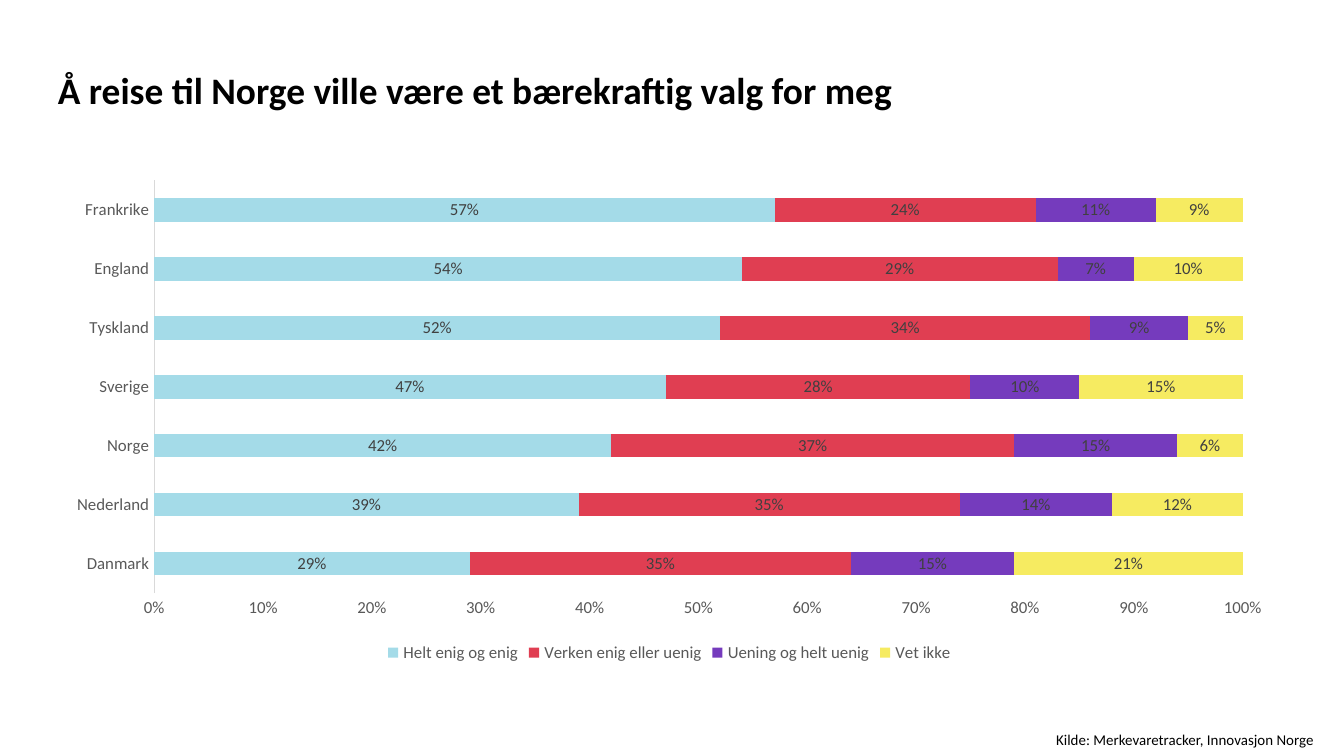
from dataclasses import dataclass

from pptx import Presentation
from pptx.chart.data import CategoryChartData
from pptx.dml.color import RGBColor
from pptx.enum.chart import XL_CHART_TYPE, XL_LEGEND_POSITION, XL_TICK_MARK
from pptx.enum.text import MSO_ANCHOR, MSO_AUTO_SIZE, PP_ALIGN
from pptx.util import Inches, Pt


@dataclass(frozen=True)
class Theme:
    font: str = "Calibri"
    text: str = "000000"
    axis_text: str = "595959"
    label_text: str = "404040"
    axis_line: str = "D9D9D9"
    background: str = "FFFFFF"
    title_size: int = 20
    chart_size: int = 10
    label_size: int = 9
    source_size: int = 8


@dataclass(frozen=True)
class Answer:
    name: str
    color: str
    percents: tuple[int, ...]


THEME = Theme()
COUNTRIES = ("Danmark", "Nederland", "Norge", "Sverige", "Tyskland", "England", "Frankrike")
ANSWERS = (
    Answer("Helt enig og enig", "A4DBE8", (29, 39, 42, 47, 52, 54, 57)),
    Answer("Verken enig eller uenig", "E03E52", (35, 35, 37, 28, 34, 29, 24)),
    Answer("Uening og helt uenig", "753BBD", (15, 14, 15, 10, 9, 7, 11)),
    Answer("Vet ikke", "F6EB61", (21, 12, 6, 15, 5, 10, 9)),
)


def set_font(font, size: int, color: str, bold: bool = False) -> None:
    font.name = THEME.font
    font.size = Pt(size)
    font.bold = bold
    font.color.rgb = RGBColor.from_string(color)


def set_fill(fill, color: str) -> None:
    fill.solid()
    fill.fore_color.rgb = RGBColor.from_string(color)


def add_title(slide, text: str) -> None:
    sp = slide.shapes.title
    sp.left, sp.top, sp.width, sp.height = map(Inches, (0.43, 0.5, 9.14, 0.34))
    set_fill(sp.fill, THEME.background)
    tf = sp.text_frame
    tf.margin_left = tf.margin_right = tf.margin_top = tf.margin_bottom = 0
    tf.vertical_anchor = MSO_ANCHOR.MIDDLE
    tf.word_wrap = True
    tf.auto_size = MSO_AUTO_SIZE.SHAPE_TO_FIT_TEXT
    tf.text = text
    p = tf.paragraphs[0]
    p.alignment = PP_ALIGN.LEFT
    set_font(p.font, THEME.title_size, THEME.text, bold=True)


def add_source(slide, text: str) -> None:
    sp = slide.shapes.add_textbox(*map(Inches, (7.76, 5.39, 2.16, 0.24)))
    tf = sp.text_frame
    tf.word_wrap = False
    tf.auto_size = MSO_AUTO_SIZE.SHAPE_TO_FIT_TEXT
    tf.text = text
    set_font(tf.paragraphs[0].font, THEME.source_size, THEME.text)


def format_axis(axis) -> None:
    axis.has_major_gridlines = False
    axis.major_tick_mark = axis.minor_tick_mark = XL_TICK_MARK.NONE
    set_font(axis.tick_labels.font, THEME.label_size, THEME.axis_text)


def add_answer_chart(slide) -> None:
    data = CategoryChartData(number_format="0%")
    data.categories = COUNTRIES
    for answer in ANSWERS:
        data.add_series(answer.name, [percent / 100 for percent in answer.percents])
    box = map(Inches, (0.39, 1.27, 9.18, 3.7))
    chart = slide.shapes.add_chart(XL_CHART_TYPE.BAR_STACKED, *box, data).chart
    chart.has_title = False
    set_font(chart.font, THEME.chart_size, THEME.text)

    format_axis(chart.category_axis)
    line = chart.category_axis.format.line
    line.width = Pt(0.75)
    set_fill(line.fill, THEME.axis_line)

    values = chart.value_axis
    format_axis(values)
    values.maximum_scale = 1
    values.format.line.fill.background()
    values.tick_labels.number_format = "0%"
    values.tick_labels.number_format_is_linked = False

    chart.has_legend = True
    chart.legend.position = XL_LEGEND_POSITION.BOTTOM
    chart.legend.include_in_layout = False
    set_font(chart.legend.font, THEME.label_size, THEME.axis_text)

    plot = chart.plots[0]
    plot.gap_width, plot.overlap = 150, 100
    plot.vary_by_categories = False
    for series, answer in zip(plot.series, ANSWERS):
        set_fill(series.format.fill, answer.color)
        labels = series.data_labels
        labels.show_value = True
        labels.number_format = "0%"
        labels.number_format_is_linked = False
        set_font(labels.font, THEME.label_size, THEME.label_text)


def main() -> None:
    prs = Presentation()
    prs.slide_width = Inches(10)
    prs.slide_height = prs.slide_width * 9 // 16
    slide = prs.slides.add_slide(prs.slide_layouts[5])
    add_title(slide, "Å reise til Norge ville være et bærekraftig valg for meg")
    add_source(slide, "Kilde: Merkevaretracker, Innovasjon Norge")
    add_answer_chart(slide)
    prs.save("out.pptx")


if __name__ == "__main__":
    main()
